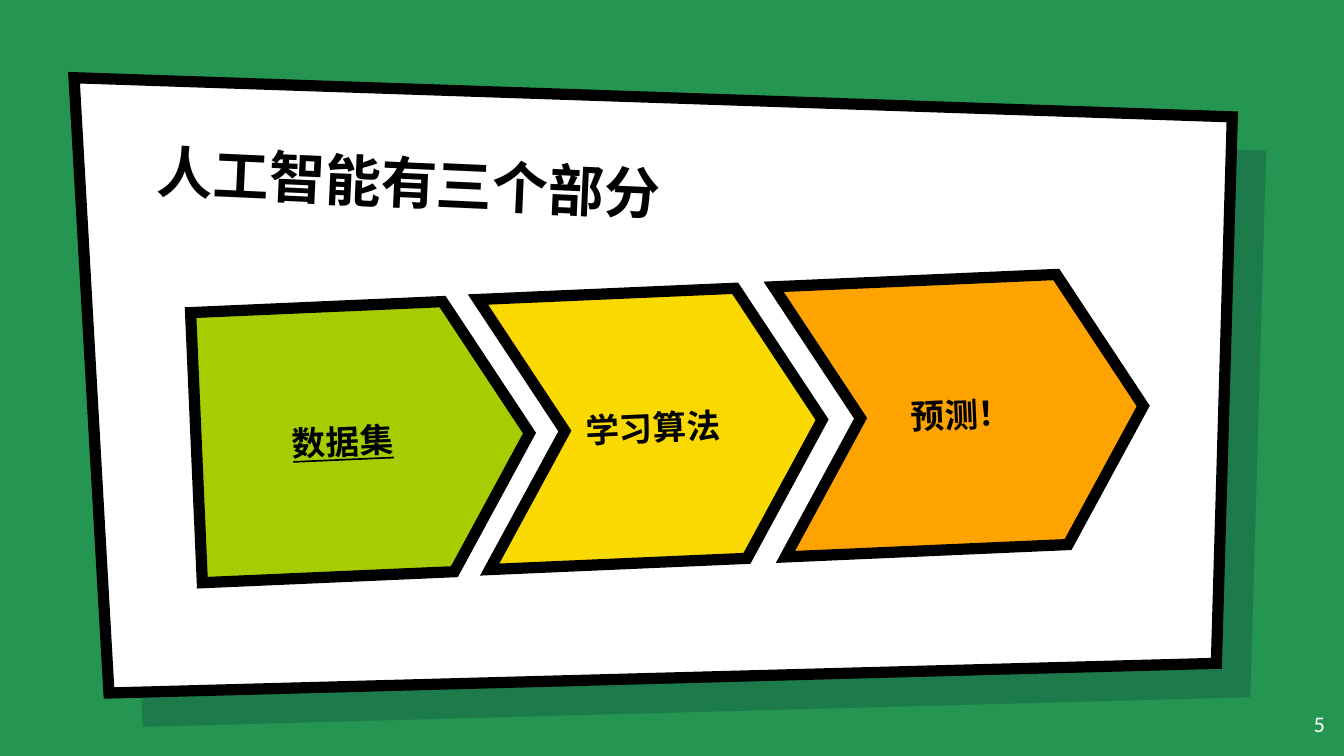
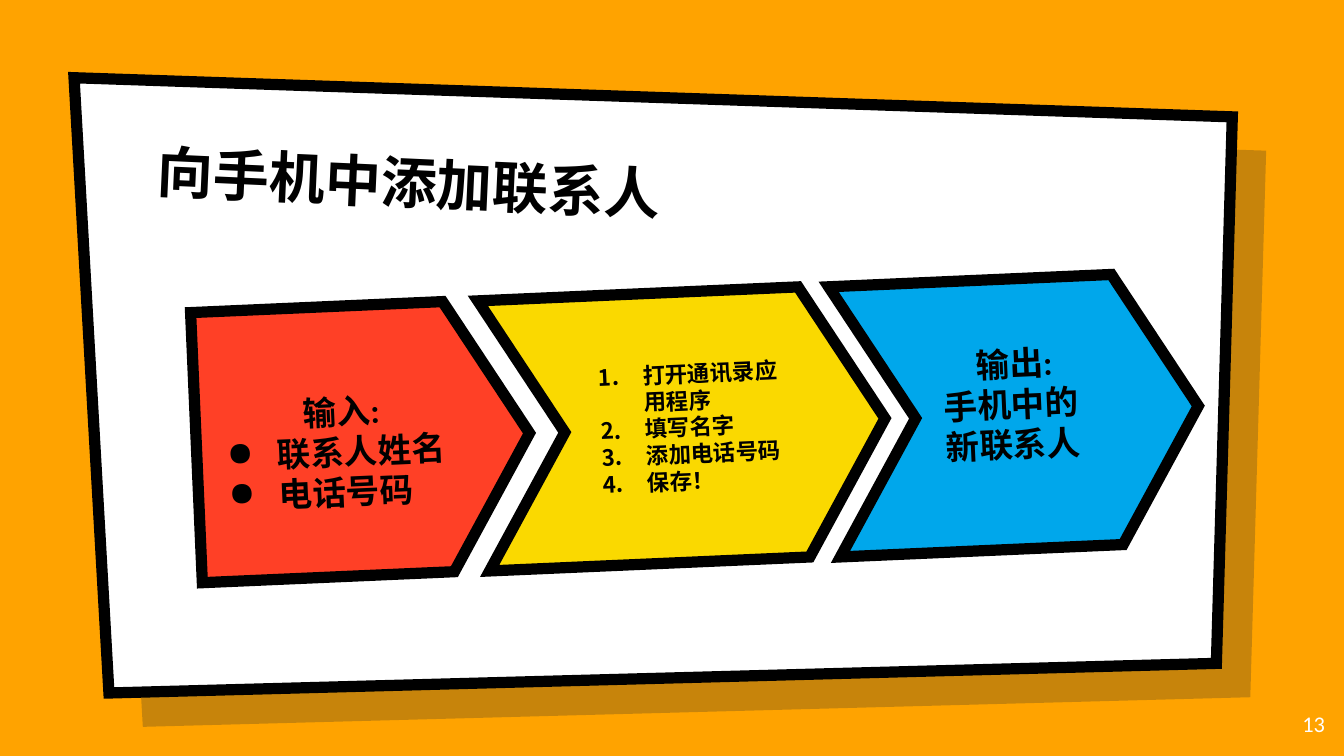
from dataclasses import dataclass

from lxml import etree
from pptx import Presentation
from pptx.dml.color import RGBColor
from pptx.enum import shapes, text
from pptx.oxml import ns
from pptx.util import Cm, Pt

GREEN = RGBColor(0x24, 0x96, 0x51)
ORANGE = RGBColor(0xFF, 0xA3, 0x00)
LIME = RGBColor(0xA6, 0xCD, 0x02)
YELLOW = RGBColor(0xFA, 0xD9, 0x00)
RED = RGBColor(0xFF, 0x40, 0x26)
BLUE = RGBColor(0x00, 0xA7, 0xEB)
NAVY = RGBColor(0x00, 0x19, 0x36)
BLACK = RGBColor(0x00, 0x00, 0x00)
WHITE = RGBColor(0xFF, 0xFF, 0xFF)
FONT = "Calibri"
INSET = 0.25
LEFT, CENTER, RIGHT = text.PP_ALIGN.LEFT, text.PP_ALIGN.CENTER, text.PP_ALIGN.RIGHT

PANEL_CORNERS = [(0, 0), (21.89, 0.74), (21.59, 11.07), (0.66, 11.63)]
PANEL_BOX = (1.4, 1.47)
SHADOW_SHIFT = 0.64
TITLE_BOX = (2.72, 2.44, 19.53, 2.11)
NUMBER_BOX = (23.77, 13.18, 1.52, 1.09)
STEPS_TOP, STEP_RISE, STEP_HEIGHT = 5.77, 0.25, 5.11


@dataclass
class Line:
    """One paragraph of text and its style."""
    words: str
    size: int = 18
    align: text.PP_ALIGN = CENTER
    spacing: float = 1.0
    bullet: tuple = ()
    margin: float = 0
    hanging: float = 0
    bold: bool = True
    underline: bool = False
    colour: RGBColor = BLACK


@dataclass
class Step:
    """One arrow of the process."""
    left: float
    width: float
    colour: RGBColor
    lines: list
    bottom_inset: float = INSET


def add_child(parent, tag, **attributes):
    """Append a DrawingML element."""
    return etree.SubElement(parent, ns.qn(tag), attributes)


def write(frame, lines, anchor, bottom_inset=INSET):
    """Fill a text frame with styled paragraphs."""
    frame.word_wrap = True
    frame.vertical_anchor = anchor
    frame.margin_left = frame.margin_top = frame.margin_right = Cm(INSET)
    frame.margin_bottom = Cm(bottom_inset)
    for index, line in enumerate(lines):
        paragraph = frame.add_paragraph() if index else frame.paragraphs[0]
        paragraph.text = line.words
        paragraph.alignment = line.align
        paragraph.line_spacing = line.spacing
        properties = paragraph._p.get_or_add_pPr()
        properties.set("marL", str(Cm(line.margin)))
        properties.set("indent", str(-Cm(line.hanging)))
        if line.bullet:
            tag, attribute, value = line.bullet
            add_child(add_child(properties, "a:buClr"), "a:srgbClr", val=str(BLACK))
            add_child(properties, tag, **{attribute: value})
        font = paragraph.font
        font.name, font.size, font.bold = FONT, Pt(line.size), line.bold
        font.underline = line.underline
        font.color.rgb = line.colour


def paint(shape, fill, outlined=True):
    """Give a shape a flat fill and, if wanted, the thick black outline."""
    shape.shadow.inherit = False
    shape.fill.solid()
    shape.fill.fore_color.rgb = fill
    if outlined:
        shape.line.color.rgb = BLACK
        shape.line.width = Pt(6)
        add_child(shape.line._get_or_add_ln(), "a:miter", lim="800000")
    else:
        shape.line.fill.background()


def add_sheet(slide, left, top):
    """Draw the slanted sheet outline at the given corner."""
    points = [(Cm(left + x), Cm(top + y)) for x, y in PANEL_CORNERS]
    builder = slide.shapes.build_freeform(*points[0])
    builder.add_line_segments(points[1:], close=True)
    return builder.convert_to_shape()


def add_panel(slide, left, top):
    """Place the white sheet over its translucent shadow."""
    shade = add_sheet(slide, left + SHADOW_SHIFT, top + SHADOW_SHIFT)
    paint(shade, NAVY, outlined=False)
    colour = shade._element.spPr.find(ns.qn("a:solidFill"))[0]
    add_child(colour, "a:alpha", val="22000")
    paint(add_sheet(slide, left, top), WHITE)


def add_label(slide, box, line, anchor, rotation=0):
    """Place a one-line text box."""
    label = slide.shapes.add_textbox(*map(Cm, box))
    label.rotation = rotation
    write(label.text_frame, [line], anchor)


def add_steps(slide, top, height, steps):
    """Place the rising row of arrows, the first with a flat back."""
    for index, step in enumerate(steps):
        kind = shapes.MSO_SHAPE.CHEVRON if index else shapes.MSO_SHAPE.PENTAGON
        box = (step.left, top - index * STEP_RISE, step.width, height)
        arrow = slide.shapes.add_shape(kind, *map(Cm, box))
        arrow.adjustments[0] = 0.3
        arrow.rotation = 357.5
        paint(arrow, step.colour)
        write(arrow.text_frame, step.lines, text.MSO_ANCHOR.MIDDLE, step.bottom_inset)


def add_process_slide(deck, background, title, number, steps):
    """Build a slide with a title and a three-step process."""
    slide = deck.slides.add_slide(deck.slide_layouts[6])
    slide.background.fill.solid()
    slide.background.fill.fore_color.rgb = background
    add_panel(slide, *PANEL_BOX)
    add_label(slide, TITLE_BOX, Line(title, 30, LEFT), text.MSO_ANCHOR.BOTTOM, 2.7)
    add_steps(slide, STEPS_TOP, STEP_HEIGHT, steps)
    page = Line(str(number), 12, RIGHT, bold=False, colour=WHITE)
    add_label(slide, NUMBER_BOX, page, text.MSO_ANCHOR.TOP)


def dotted(words):
    """Return a bulleted line."""
    return Line(words, align=LEFT, bullet=("a:buChar", "char", "●"), margin=1.27, hanging=0.95)


def numbered(words):
    """Return a numbered line."""
    return Line(words, 12, LEFT, bullet=("a:buAutoNum", "type", "arabicPeriod"),
                margin=1.27, hanging=0.84)


def main():
    """Build and save the deck."""
    deck = Presentation()
    deck.slide_width, deck.slide_height = Cm(25.4), Cm(14.29)
    add_process_slide(deck, GREEN, "人工智能有三个部分", 5, [
        Step(3.71, 6.3, LIME, [Line("数据集", underline=True)]),
        Step(9.14, 6.4, YELLOW, [Line("学习算法")]),
        Step(14.73, 6.88, ORANGE, [Line("预测！")]),
    ])
    contact_input = [Line("输入:", spacing=1.5), dotted("联系人姓名"), dotted("电话号码")]
    actions = ["打开通讯录应用程序", "填写名字", "添加电话号码", "保存！"]
    contact_output = [Line("输出:", spacing=1.5),
                      Line("手机中的新联系人", align=LEFT, margin=0.3)]
    add_process_slide(deck, ORANGE, "向手机中添加联系人", 13, [
        Step(3.71, 6.3, RED, contact_input),
        Step(9.14, 7.59, YELLOW, [numbered(action) for action in actions]),
        Step(15.77, 6.88, BLUE, contact_output, bottom_inset=1.02),
    ])
    deck.save("out.pptx")


if __name__ == "__main__":
    main()
